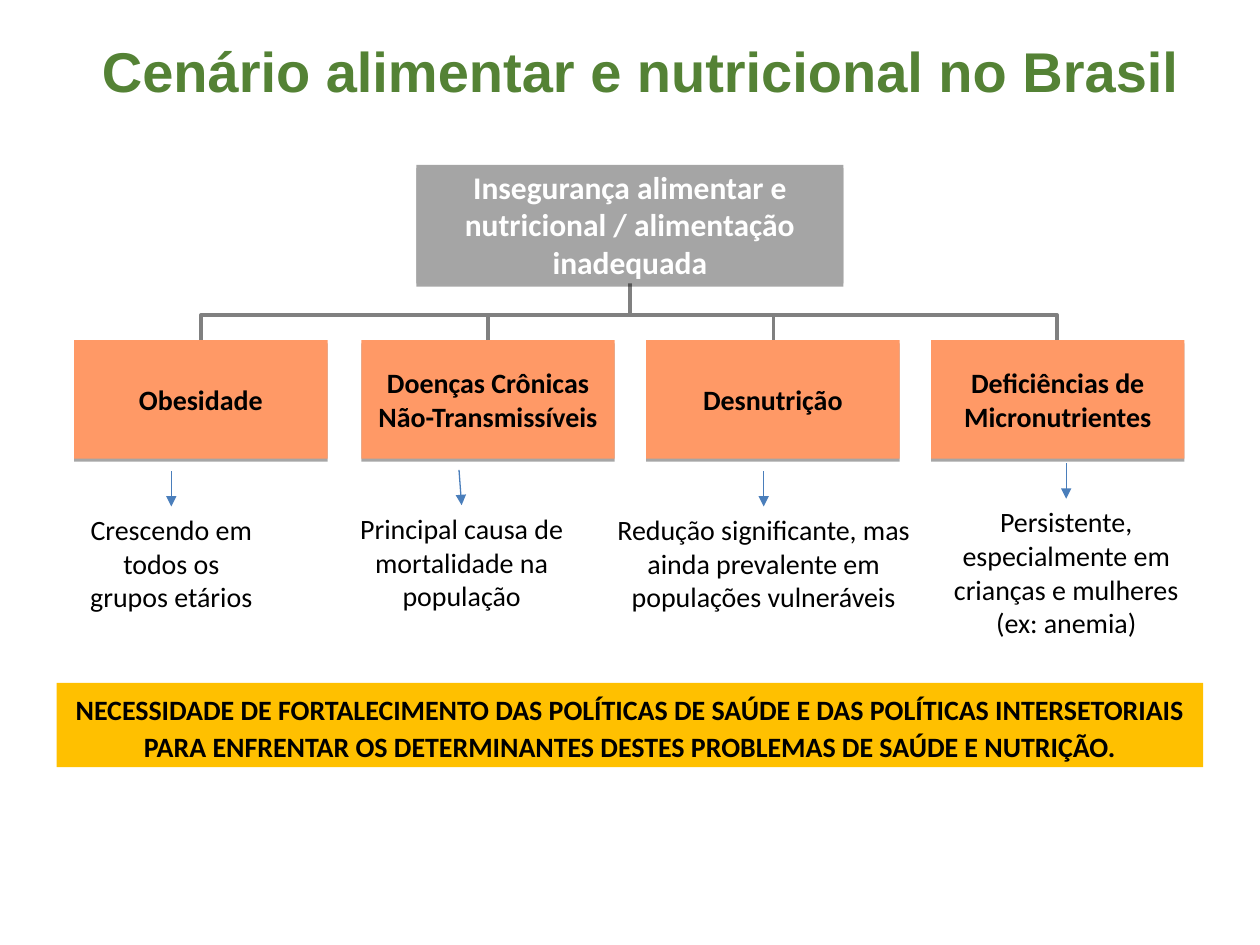
from dataclasses import dataclass
from lxml.etree import SubElement
from pptx import Presentation
from pptx.dml.color import RGBColor as RGB
from pptx.enum.shapes import MSO_CONNECTOR as Link, MSO_SHAPE as Form
from pptx.enum.text import MSO_ANCHOR as Anchor, PP_ALIGN as Align
from pptx.oxml.ns import qn
from pptx.util import Pt


@dataclass(frozen=True)
class Theme:
    head: str = "Arial"
    body: str = "Calibri"
    green: RGB = RGB(0x54, 0x82, 0x35)
    gold: RGB = RGB(0xFF, 0xC0, 0x00)
    gray: RGB = RGB(0xA5, 0xA5, 0xA5)
    peach: RGB = RGB(0xFF, 0x99, 0x66)
    branch: RGB = RGB(0x80, 0x80, 0x80)
    arrow: RGB = RGB(0x4A, 0x7E, 0xBB)
    black: RGB = RGB(0, 0, 0)
    white: RGB = RGB(0xFF, 0xFF, 0xFF)
    big: int = 32
    mid: int = 18
    small: int = 16


class Deck:
    def __init__(self, theme):
        self.theme = theme
        self.deck = Presentation()
        self.deck.slide_width, self.deck.slide_height = Pt(720), Pt(540)
        self.slide = self.deck.slides.add_slide(self.deck.slide_layouts[5])
        self.shapes = self.slide.shapes

    def label(self, shape, text, size, color, bold=False, face=None,
              align=Align.CENTER, anchor=Anchor.TOP, pad=(7.2, 3.6)):
        frame = shape.text_frame
        frame.word_wrap = True
        frame.vertical_anchor = anchor
        frame.margin_left = frame.margin_right = Pt(pad[0])
        frame.margin_top = frame.margin_bottom = Pt(pad[1])
        frame.text = text
        para = frame.paragraphs[0]
        para.alignment = align
        font = para.font
        font.name, font.size, font.bold = face or self.theme.body, Pt(size), bold
        font.color.rgb = color
        return para

    def title(self, text, left, top, width, height):
        shape = self.shapes.title
        shape.left, shape.top = Pt(left), Pt(top)
        shape.width, shape.height = Pt(width), Pt(height)
        self.label(shape, text, self.theme.big, self.theme.green, True,
                   self.theme.head, Align.LEFT)

    def block(self, left, top, width, height, fill):
        shape = self.shapes.add_shape(
            Form.RECTANGLE, Pt(left), Pt(top), Pt(width), Pt(height))
        shape.fill.solid()
        shape.fill.fore_color.rgb = fill
        shape.line.fill.background()
        shape.shadow.inherit = False
        return shape

    def box(self, text, left, top, width, height, fill, size, color):
        shape = self.block(left, top, width, height, fill)
        effect = shape._element.spPr.find(qn("a:effectLst"))
        shade = SubElement(effect, qn("a:outerShdw"), dist=str(Pt(1.8)),
                           dir="5400000", rotWithShape="0")
        tint = SubElement(shade, qn("a:srgbClr"), val="000000")
        SubElement(tint, qn("a:alpha"), val="35000")
        self.label(shape, text, size, color, True,
                   anchor=Anchor.MIDDLE, pad=(0.7, 0.7))

    def banner(self, text, left, top, width, height):
        shape = self.block(left, top, width, height, self.theme.gold)
        para = self.label(shape, text, self.theme.small, self.theme.black, True)
        para.line_spacing = 1.1
        para.space_after = Pt(5.3)

    def branch(self, start, top, bend, end, low, weight):
        form = self.shapes.build_freeform(start, top, scale=Pt(1))
        form.add_line_segments([(start, bend), (end, bend), (end, low)], close=False)
        shape = form.convert_to_shape()
        shape.fill.background()
        shape.line.color.rgb = self.theme.branch
        shape.line.width = Pt(weight)
        shape.shadow.inherit = False

    def note(self, text, left, top, width, height):
        shape = self.shapes.add_textbox(Pt(left), Pt(top), Pt(width), Pt(height))
        self.label(shape, text, self.theme.small, self.theme.black)
        return shape

    def arrow(self, note, rise, skew):
        start = note.left + note.width // 2 - Pt(skew)
        line = self.shapes.add_connector(
            Link.STRAIGHT, start, note.top - Pt(rise), start, note.top)
        line.end_connect(note, 0)
        line.line.color.rgb = self.theme.arrow
        line.line.width = Pt(0.75)
        props = line._element.spPr
        SubElement(props.find(qn("a:ln")), qn("a:tailEnd"), type="triangle")
        SubElement(props, qn("a:effectLst"))

    def save(self):
        self.deck.save("out.pptx")


def main():
    theme = Theme()
    deck = Deck(theme)
    top, width, height = 194.4, 144.8, 67.7
    items = [
        ("Obesidade", 42.4, 2.25, "Crescendo em todos os grupos etários",
         (42.4, 289.4, 111, 65), 0),
        ("Doenças Crônicas Não-Transmissíveis", 206.5, 2.25,
         "Principal causa de mortalidade na população",
         (190, 288.7, 147.6, 65), 1.5),
        ("Desnutrição", 369.3, 2,
         "Redução significante, mas ainda prevalente em populações vulneráveis",
         (342.8, 289.4, 187.2, 65), 0),
        ("Deficiências de Micronutrientes", 532.1, 2.25,
         "Persistente, especialmente em crianças e mulheres (ex: anemia)",
         (535.5, 285, 147.6, 84), 0),
    ]

    deck.title("Cenário alimentar e nutricional no Brasil", 51, 17.3, 643, 45.4)
    deck.banner(
        "NECESSIDADE DE FORTALECIMENTO DAS POLÍTICAS DE SAÚDE E DAS POLÍTICAS "
        "INTERSETORIAIS PARA ENFRENTAR OS DETERMINANTES DESTES PROBLEMAS DE "
        "SAÚDE E NUTRIÇÃO.", 32.4, 390.2, 655.2, 48.2)
    for name, left, weight, *rest in reversed(items):
        deck.branch(360, 154.4, 180, left + width / 2, top, weight)
    deck.box("Insegurança alimentar e nutricional / alimentação inadequada",
             238, 94.3, 244, height, theme.gray, theme.mid, theme.white)
    for name, left, *rest in items:
        deck.box(name, left, top, width, height,
                 theme.peach, theme.small, theme.black)
    for *rest, text, place, skew in items:
        deck.arrow(deck.note(text, *place), 20.2, skew)
    deck.save()


if __name__ == "__main__":
    main()
